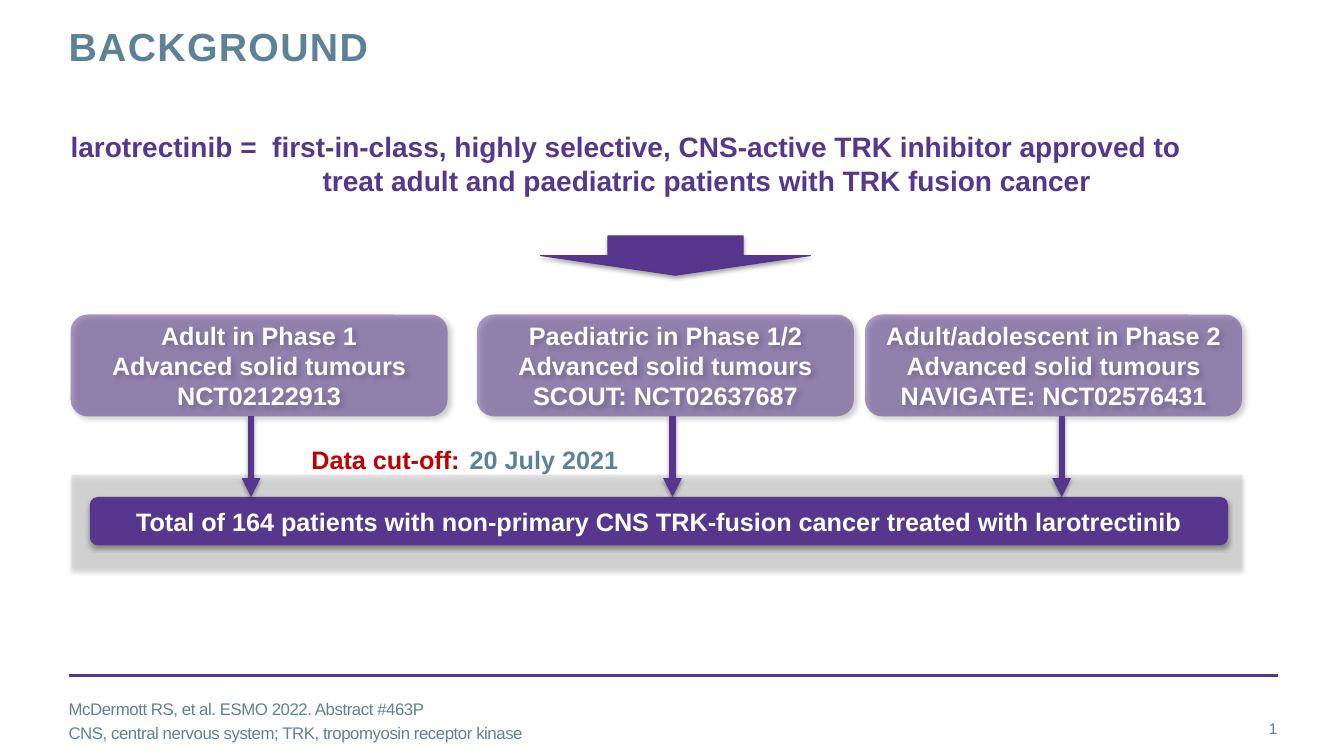
from lxml import etree
from pptx import Presentation
from pptx.dml.color import RGBColor
from pptx.enum import shapes, text
from pptx.oxml import ns
from pptx.util import Inches, Pt

PURPLE = RGBColor(0x56, 0x37, 0x8D)
DARK_PURPLE = RGBColor(0x54, 0x34, 0x8C)
TEAL = RGBColor(0x5D, 0x82, 0x98)
GREY = RGBColor(0xD1, 0xCF, 0xD1)
RED = RGBColor(0xC0, 0x00, 0x00)
WHITE = RGBColor(0xFF, 0xFF, 0xFF)

TITLE = "BACKGROUND"
DRUG = "larotrectinib =\tfirst-in-class, highly selective, CNS-active TRK inhibitor approved to"
DRUG_MORE = "treat adult and paediatric patients with TRK fusion cancer"
TRIALS = [
    (0.7, ["Adult in Phase 1", "Advanced solid tumours", "NCT02122913"]),
    (4.73, ["Paediatric in Phase 1/2", "Advanced solid tumours", "SCOUT: NCT02637687"]),
    (8.58, ["Adult/adolescent in Phase 2", "Advanced solid tumours", "NAVIGATE: NCT02576431"]),
]
ARROW_X = [2.49, 6.67, 10.53]
CUT_OFF = [("Data cut-off:", RED), ("\t20 July 2021", TEAL)]
TOTAL = "Total of 164 patients with non-primary CNS TRK-fusion cancer treated with larotrectinib"
NOTES = [
    "McDermott RS, et al. ESMO 2022. Abstract #463P",
    "CNS, central nervous system; TRK, tropomyosin receptor kinase",
]
CARD_TOP, CARD_W, CARD_H = 3.12, 3.74, 1.01
BAR_TOP = 4.93
SOFT = dict(opacity=35, blur=3.1, dist=1.8, angle=90)
DEEP = dict(opacity=40, blur=4, dist=3, angle=45)
THIN = dict(opacity=38, blur=3.1, dist=1.6, angle=90)


def add(parent, tag, **attrs):
    return etree.SubElement(parent, ns.qn(tag), {k: str(v) for k, v in attrs.items()})


def place(s, left, top, width, height):
    s.left, s.top, s.width, s.height = map(Inches, (left, top, width, height))


def write(s, lines, size=18, color=WHITE, bold=True, align=text.PP_ALIGN.LEFT,
          anchor=text.MSO_ANCHOR.TOP, insets=(0, 0, 0, 0), spacing=0, leading=None,
          gap=0, tab=None, indents=(), plain=False):
    tf = s.text_frame
    tf.word_wrap, tf.auto_size, tf.vertical_anchor = True, text.MSO_AUTO_SIZE.NONE, anchor
    tf.margin_left, tf.margin_top, tf.margin_right, tf.margin_bottom = map(Inches, insets)
    for i, line in enumerate(lines):
        p = tf.add_paragraph() if i else tf.paragraphs[0]
        pPr = p._p.get_or_add_pPr()
        if plain:
            pPr.set("marL", "0")
            pPr.set("indent", "0")
            add(pPr, "a:buNone")
        if indents:
            pPr.set("marL", str(Inches(indents[i])))
        if tab:
            add(add(pPr, "a:tabLst"), "a:tab", pos=Inches(tab), algn="l")
        p.alignment = align
        p.space_before = Pt(gap if i else 0)
        if leading:
            p.line_spacing = Pt(leading)
        for words, tint in [(line, color)] if isinstance(line, str) else line:
            r = p.add_run()
            r.text = words
            r.font.name, r.font.size, r.font.bold = "Arial", Pt(size), bold
            r.font.color.rgb = tint
            if spacing:
                r._r.get_or_add_rPr().set("spc", str(round(spacing * 100)))


def cast_shadow(s, opacity, blur, dist, angle):
    effects = add(s._element.spPr, "a:effectLst")
    shadow = add(effects, "a:outerShdw", blurRad=Pt(blur), dist=Pt(dist),
                 dir=angle * 60000, rotWithShape=0)
    add(add(shadow, "a:srgbClr", val="000000"), "a:alpha", val=opacity * 1000)


def draw(kind, box, color, shadow, alpha=None, outline=None):
    s = sp.add_shape(kind, *map(Inches, box))
    s.fill.solid()
    s.fill.fore_color.rgb = color
    if alpha:
        add(s._element.spPr.find(".//" + ns.qn("a:srgbClr")), "a:alpha", val=alpha * 1000)
    if outline:
        s.line.color.rgb, s.line.width = outline, Pt(0.75)
    else:
        s.line.fill.background()
    cast_shadow(s, **shadow)
    return s


def connect(x1, y1, x2, y2, width):
    s = sp.add_connector(shapes.MSO_CONNECTOR.STRAIGHT, *map(Inches, (x1, y1, x2, y2)))
    s.line.color.rgb, s.line.width = PURPLE, Pt(width)
    return s


def textbox(*box):
    return sp.add_textbox(*map(Inches, box))


prs = Presentation()
prs.slide_width, prs.slide_height = Inches(13.33), Inches(7.5)
slide = prs.slides.add_slide(prs.slide_layouts[1])
sp = slide.shapes
centre, middle = text.PP_ALIGN.CENTER, text.MSO_ANCHOR.MIDDLE

title, notes = sp.title, slide.placeholders[1]
place(title, 0.68, 0.27, 9.56, 0.88)
write(title, [TITLE], size=28, color=TEAL, spacing=1, leading=30)
place(notes, 0.68, 6.95, 11.13, 0.4)
write(notes, NOTES, size=12, color=TEAL, bold=False, anchor=middle, spacing=-0.3,
      gap=3, plain=True)

footer_rule = connect(0.68, 6.7, 12.68, 6.7, 2)
add(footer_rule._element.spPr, "a:effectLst")

number = textbox(11.81, 7.03, 0.86, 0.4)
write(number, ["6"], size=11, color=TEAL, bold=False, align=text.PP_ALIGN.RIGHT, anchor=middle)
run = number.text_frame.paragraphs[0].runs[0]._r
run.tag = ns.qn("a:fld")
run.set("id", "{B6F15528-21DE-4FAA-801E-634DDDAF4B2B}")
run.set("type", "slidenum")

write(textbox(0.7, 1.24, 11.48, 0.77), [DRUG, DRUG_MORE], size=20, color=PURPLE,
      insets=(0, 0.05, 0.1, 0.05), tab=2, indents=(0, 2.5))
draw(shapes.MSO_SHAPE.DOWN_ARROW, (5.36, 2.34, 2.68, 0.39), PURPLE, SOFT, outline=DARK_PURPLE)
draw(shapes.MSO_SHAPE.RECTANGLE, (0.71, 4.71, 11.61, 0.93), GREY, SOFT, alpha=50)

for left, lines in TRIALS:
    card = draw(shapes.MSO_SHAPE.ROUNDED_RECTANGLE, (left, CARD_TOP, CARD_W, CARD_H),
                PURPLE, DEEP, alpha=50)
    write(card, lines, align=centre, anchor=middle)

total = draw(shapes.MSO_SHAPE.ROUNDED_RECTANGLE, (0.89, BAR_TOP, 11.29, 0.48), PURPLE, SOFT)
write(total, [TOTAL], align=centre, anchor=middle)

for x in ARROW_X:
    arrow = connect(x, CARD_TOP + CARD_H, x, BAR_TOP, 4.5)
    add(arrow.line._get_or_add_ln(), "a:tailEnd", type="triangle")
    cast_shadow(arrow, **THIN)

write(textbox(2.99, 4.36, 3.27, 0.4), [CUT_OFF], insets=(0.1, 0.05, 0, 0.05), tab=1.57)

prs.save("out.pptx")
